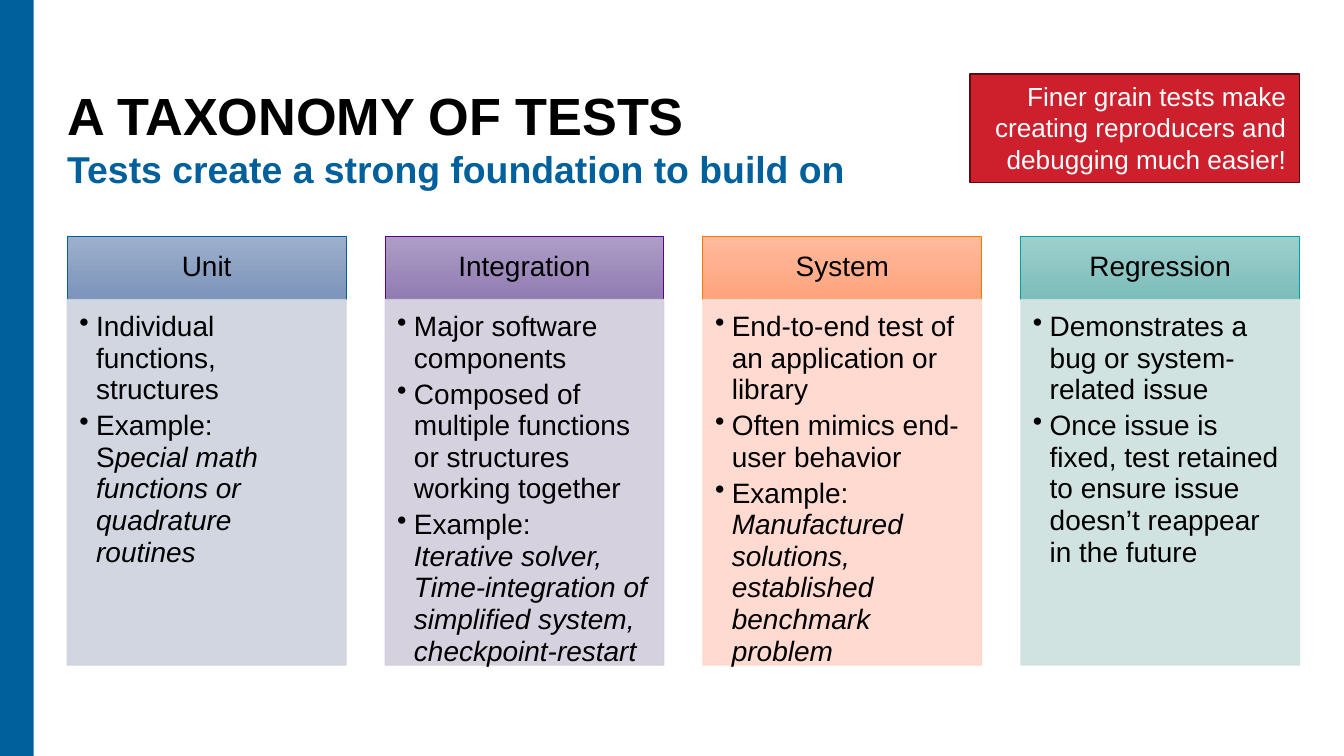
from lxml.etree import SubElement
from pptx import Presentation
from pptx.dml.color import RGBColor
from pptx.enum.shapes import MSO_SHAPE as Shape
from pptx.enum.text import MSO_ANCHOR as Anchor, PP_ALIGN as Align
from pptx.oxml.ns import qn
from pptx.util import Inches, Pt

WHITE = RGBColor(0xFF, 0xFF, 0xFF)
BLACK = RGBColor(0x00, 0x00, 0x00)
BLUE = RGBColor(0x00, 0x60, 0x9C)
PURPLE = RGBColor(0x5B, 0x00, 0x91)
ORANGE = RGBColor(0xFF, 0x79, 0x00)
TEAL = RGBColor(0x00, 0xA1, 0x9C)
RED = RGBColor(0xCD, 0x20, 0x2C)
DARK_RED = RGBColor(0x5A, 0x0E, 0x13)
BLUE_SHADES = RGBColor(0x9D, 0xAF, 0xCC), RGBColor(0x7C, 0x94, 0xBA)
PURPLE_SHADES = RGBColor(0xAD, 0x9D, 0xC6), RGBColor(0x91, 0x7C, 0xB2)
ORANGE_SHADES = RGBColor(0xFF, 0xBA, 0x9E), RGBColor(0xFF, 0xA3, 0x7C)
TEAL_SHADES = RGBColor(0x9D, 0xCF, 0xCC), RGBColor(0x7C, 0xBD, 0xBA)
PALE_BLUE = RGBColor(0xCC, 0xD2, 0xDE)
PALE_PURPLE = RGBColor(0xD2, 0xCC, 0xDC)
PALE_ORANGE = RGBColor(0xFF, 0xD7, 0xCC)
PALE_TEAL = RGBColor(0xCC, 0xE0, 0xDE)

# Each bullet is (plain text, italic text); a newline is a line break.
TEST_KINDS = [
    ("Unit", BLUE, BLUE_SHADES, PALE_BLUE, [
        ("Individual functions, structures", ""),
        ("Example:\nS", "pecial math functions or quadrature routines")]),
    ("Integration", PURPLE, PURPLE_SHADES, PALE_PURPLE, [
        ("Major software components", ""),
        ("Composed of multiple functions or structures working together", ""),
        ("Example:\n", "Iterative solver, Time-integration of simplified system, "
                       "checkpoint-restart")]),
    ("System", ORANGE, ORANGE_SHADES, PALE_ORANGE, [
        ("End-to-end test of an application or library", ""),
        ("Often mimics end-user behavior", ""),
        ("Example:\n", "Manufactured solutions, established benchmark problem")]),
    ("Regression", TEAL, TEAL_SHADES, PALE_TEAL, [
        ("Demonstrates a bug or system-related issue", ""),
        ("Once issue is fixed, test retained to ensure issue doesn’t reappear "
         "in the future", "")]),
]


class TaxonomySlide:
    """Draws on one slide; positions and sizes are percentages of the slide."""

    font = "Arial"
    card_size = 15

    def __init__(self, deck):
        self.deck = deck
        self.slide = deck.slides.add_slide(deck.slide_layouts[6])

    def area(self, left, top, width, height):
        across, down = self.deck.slide_width / 100, self.deck.slide_height / 100
        return (round(left * across), round(top * down),
                round(width * across), round(height * down))

    def frame(self, shape, insets, anchor=Anchor.TOP):
        """Prepare the text frame; insets are left, top, right, bottom in inches."""
        frame = shape.text_frame
        frame.word_wrap = True
        frame.vertical_anchor = anchor
        (frame.margin_left, frame.margin_top,
         frame.margin_right, frame.margin_bottom) = map(Inches, insets)
        return frame

    def add_text(self, paragraph, text, size, color=BLACK, bold=False, italic=False):
        for index, part in enumerate(text.split("\n")):
            if index:
                paragraph.add_line_break()
            if part:
                run = paragraph.add_run()
                run.text = part
                run.font.name, run.font.size = self.font, Pt(size)
                run.font.bold, run.font.italic = bold, italic
                run.font.color.rgb = color

    def heading(self, area, text, size, color, anchor, spacing):
        box = self.slide.shapes.add_textbox(*self.area(*area))
        paragraph = self.frame(box, (0, 0, 0, 0), anchor).paragraphs[0]
        paragraph.line_spacing = spacing
        self.add_text(paragraph, text, size, color, bold=True)

    def panel(self, area, fill, line=None, line_width=0.5):
        """Rectangle; a pair of colours as fill gives a top-to-bottom gradient."""
        panel = self.slide.shapes.add_shape(Shape.RECTANGLE, *self.area(*area))
        panel.shadow.inherit = False
        if isinstance(fill, RGBColor):
            panel.fill.solid()
            panel.fill.fore_color.rgb = fill
        else:
            panel.fill.gradient()
            panel.fill.gradient_angle = 270
            for stop, shade in zip(panel.fill.gradient_stops, fill):
                stop.color.rgb = shade
        if line is None:
            panel.line.fill.background()
        else:
            panel.line.color.rgb = line
            panel.line.width = Pt(line_width)
        return panel

    def callout(self, area, text):
        box = self.panel(area, RED, DARK_RED, 1)
        paragraph = self.frame(box, (0.1, 0.05, 0.1, 0.05)).paragraphs[0]
        paragraph.alignment = Align.RIGHT
        self.add_text(paragraph, text, 14, WHITE)

    def card_header(self, area, text, line, shades):
        header = self.panel(area, shades, line)
        frame = self.frame(header, (0.12, 0.07, 0.12, 0.07), Anchor.MIDDLE)
        paragraph = frame.paragraphs[0]
        paragraph.alignment = Align.CENTER
        paragraph.line_spacing = 0.9
        self.add_text(paragraph, text, self.card_size)

    def card_body(self, area, pale, bullets):
        body = self.panel(area, pale, pale)
        for color in body._element.spPr.iter(qn("a:srgbClr")):
            SubElement(color, qn("a:alpha"), val="90000")
        frame = self.frame(body, (0.09, 0.09, 0.12, 0.13))
        for index, (plain, italic) in enumerate(bullets):
            paragraph = frame.add_paragraph() if index else frame.paragraphs[0]
            self.bullet(paragraph)
            self.add_text(paragraph, plain, self.card_size)
            self.add_text(paragraph, italic, self.card_size, italic=True)

    def bullet(self, paragraph):
        paragraph.alignment = Align.LEFT
        paragraph.line_spacing = 0.94
        paragraph.space_after = Pt(2.25)
        properties = paragraph._p.get_or_add_pPr()
        properties.set("marL", str(Inches(0.125)))
        properties.set("indent", str(Inches(-0.125)))
        SubElement(properties, qn("a:buChar"), char="•")


def main():
    deck = Presentation()
    deck.slide_width, deck.slide_height = Inches(10), Inches(5.625)
    page = TaxonomySlide(deck)
    page.panel((0, 0, 2.5, 100), BLUE)
    margin, text_width = 5, 91.7
    page.heading((margin, 4.8, text_width, 14.6), "A TAXONOMY OF TESTS",
                 28, BLACK, Anchor.BOTTOM, 0.9)
    page.heading((margin, 19.4, text_width, 8.5),
                 "Tests create a strong foundation to build on",
                 20, BLUE, Anchor.TOP, 1.0)

    card_width, header_top, header_height, body_height = 20.75, 31.3, 8.3, 48.4
    step = (text_width - card_width) / (len(TEST_KINDS) - 1)
    for column, (name, line, shades, pale, bullets) in enumerate(TEST_KINDS):
        left = margin + column * step
        page.card_header((left, header_top, card_width, header_height),
                         name, line, shades)
        page.card_body((left, header_top + header_height, card_width, body_height),
                       pale, bullets)

    page.callout((72.15, 9.75, 24.55, 14.4),
                 "Finer grain tests make creating reproducers and "
                 "debugging much easier!")
    deck.save("out.pptx")


if __name__ == "__main__":
    main()
